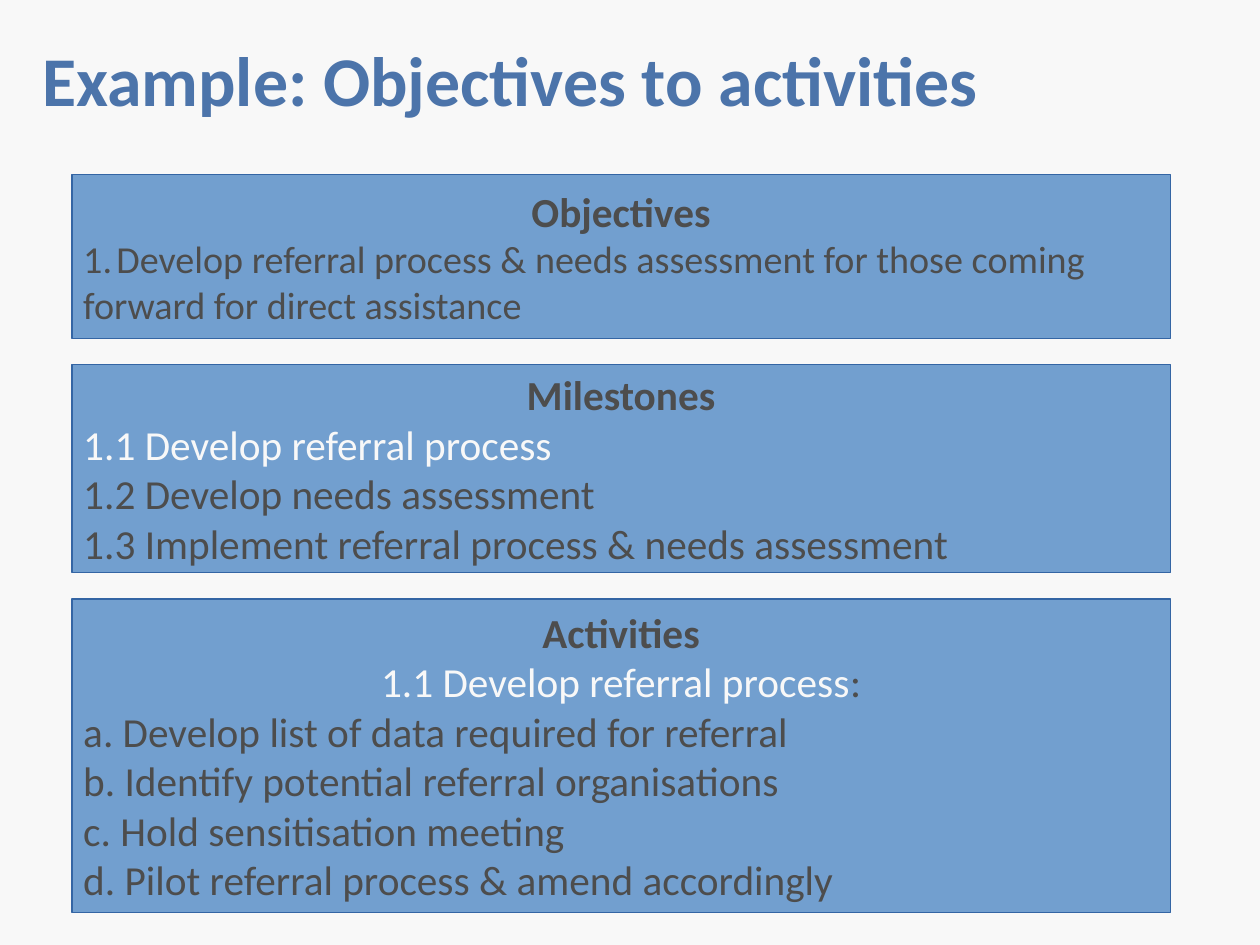
from lxml.etree import SubElement
from pptx import Presentation
from pptx.dml.color import RGBColor
from pptx.enum.shapes import MSO_SHAPE as Shape
from pptx.enum.text import MSO_ANCHOR as Anchor, PP_ALIGN as Align
from pptx.oxml.ns import qn
from pptx.util import Emu, Inches, Pt

PAPER = RGBColor(0xF8, 0xF8, 0xF8)
BLUE = RGBColor(0x72, 0x9F, 0xCF)
EDGE = RGBColor(0x34, 0x65, 0xA4)
GREY = RGBColor(0x4D, 0x4D, 0x4D)
TITLE = RGBColor(0x4C, 0x74, 0xAA)


def set_frame(frame, side, top):
    values = {
        "word_wrap": True,
        "vertical_anchor": Anchor.MIDDLE,
        "margin_left": Inches(side),
        "margin_right": Inches(side),
        "margin_top": Inches(top),
        "margin_bottom": Inches(top),
    }
    for name, value in values.items():
        setattr(frame, name, value)


def add_run(para, text, size, color, bold=False):
    run = para.add_run()
    run.text = text
    values = {"name": "Calibri", "size": Pt(size), "bold": bold}
    for name, value in values.items():
        setattr(run.font, name, value)
    run.font.color.rgb = color


# Slide of 28 by 21 cm, as whole screen units
deck = Presentation()
deck.slide_width, deck.slide_height = Emu(10080625), Emu(7559675)
slide = deck.slides.add_slide(deck.slide_layouts[6])
slide.background.fill.solid()
slide.background.fill.fore_color.rgb = PAPER

# Title
box = slide.shapes.add_textbox(Inches(0.37), Inches(0.12), Inches(9.56), Inches(1.13))
set_frame(box.text_frame, 0, 0)
add_run(box.text_frame.paragraphs[0], "Example: Objectives to activities", 44, TITLE, True)

# Panels: top, height, heading, text size, lines of (alignment, runs)
STEP = ("1.1 Develop referral process", PAPER)
panels = [
    (3.19, 1.82, "Milestones", 26, [
        (Align.LEFT, [STEP]),
        (Align.LEFT, [("1.2 Develop needs assessment", GREY)]),
        (Align.LEFT, [("1.3 Implement referral process & needs assessment", GREY)]),
    ]),
    (5.24, 2.74, "Activities", 26, [
        (Align.CENTER, [STEP, (":", GREY)]),
        (Align.LEFT, [("a. Develop list of data required for referral", GREY)]),
        (Align.LEFT, [("b. Identify potential referral organisations", GREY)]),
        (Align.LEFT, [("c. Hold sensitisation meeting", GREY)]),
        (Align.LEFT, [("d. Pilot referral process & amend accordingly", GREY)]),
    ]),
    (1.53, 1.43, "Objectives", 24, [
        (Align.LEFT, [("Develop referral process & needs assessment for those coming", GREY)]),
        (Align.LEFT, [("forward for direct assistance", GREY)]),
    ]),
]
frames = {}
for top, height, head, size, lines in panels:
    panel = slide.shapes.add_shape(
        Shape.RECTANGLE, Inches(0.63), Inches(top), Inches(9.61), Inches(height))
    panel.shadow.inherit = False
    panel.fill.solid()
    panel.fill.fore_color.rgb = BLUE
    panel.line.color.rgb = EDGE
    panel.line.width = Pt(0)
    frame = frames[head] = panel.text_frame
    set_frame(frame, 0.1, 0.05)
    para = frame.paragraphs[0]
    para.alignment = Align.CENTER
    add_run(para, head, 26, GREY, True)
    for align, runs in lines:
        para = frame.add_paragraph()
        para.alignment = align
        for text, color in runs:
            add_run(para, text, size, color)

# Number of the objective
props = frames["Objectives"].paragraphs[1]._p.get_or_add_pPr()
props.set("marL", str(Inches(0.29)))
props.set("indent", str(-Inches(0.29)))
SubElement(props, qn("a:buFont")).set("typeface", "Calibri")
SubElement(props, qn("a:buAutoNum")).set("type", "arabicPeriod")

deck.save("out.pptx")
